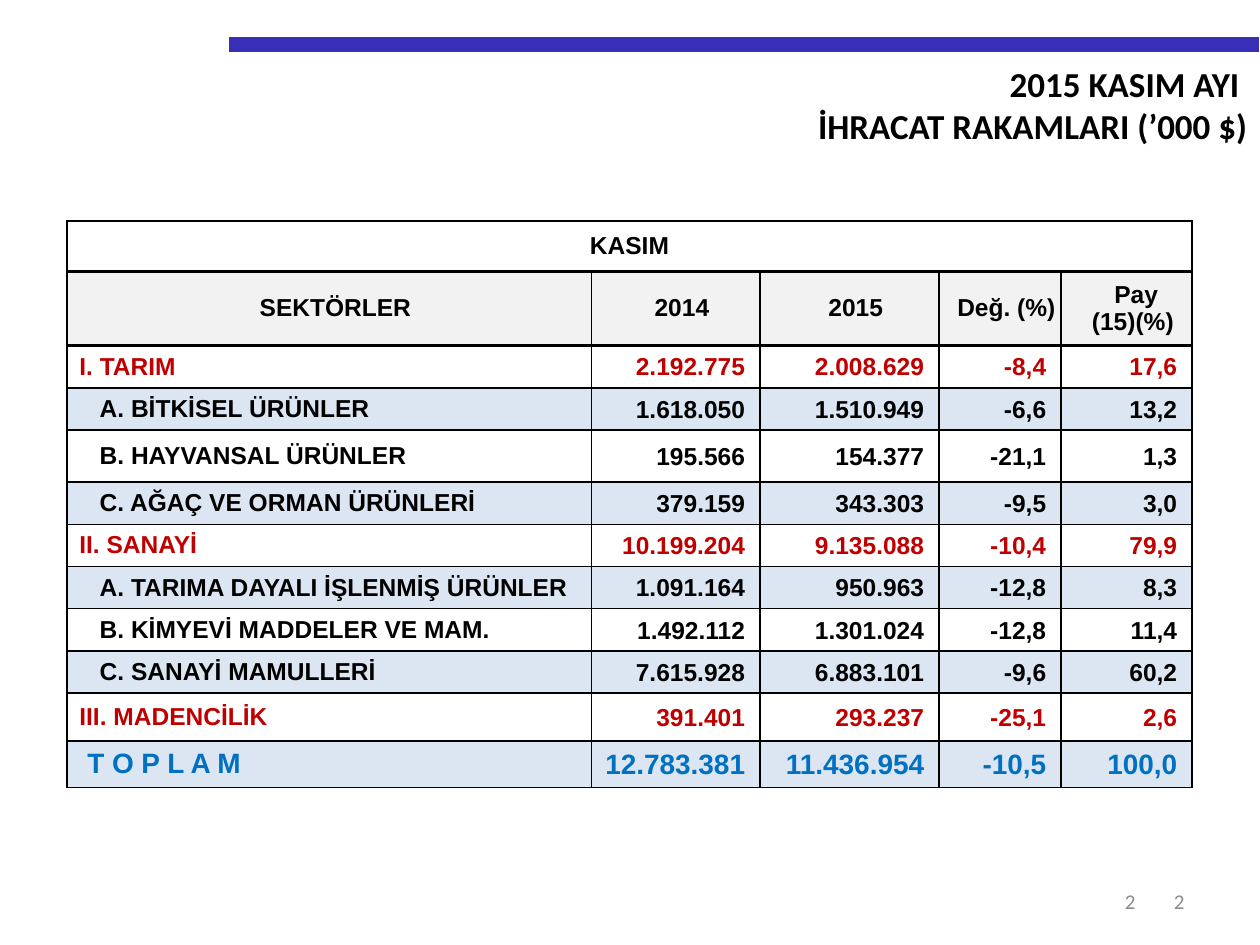
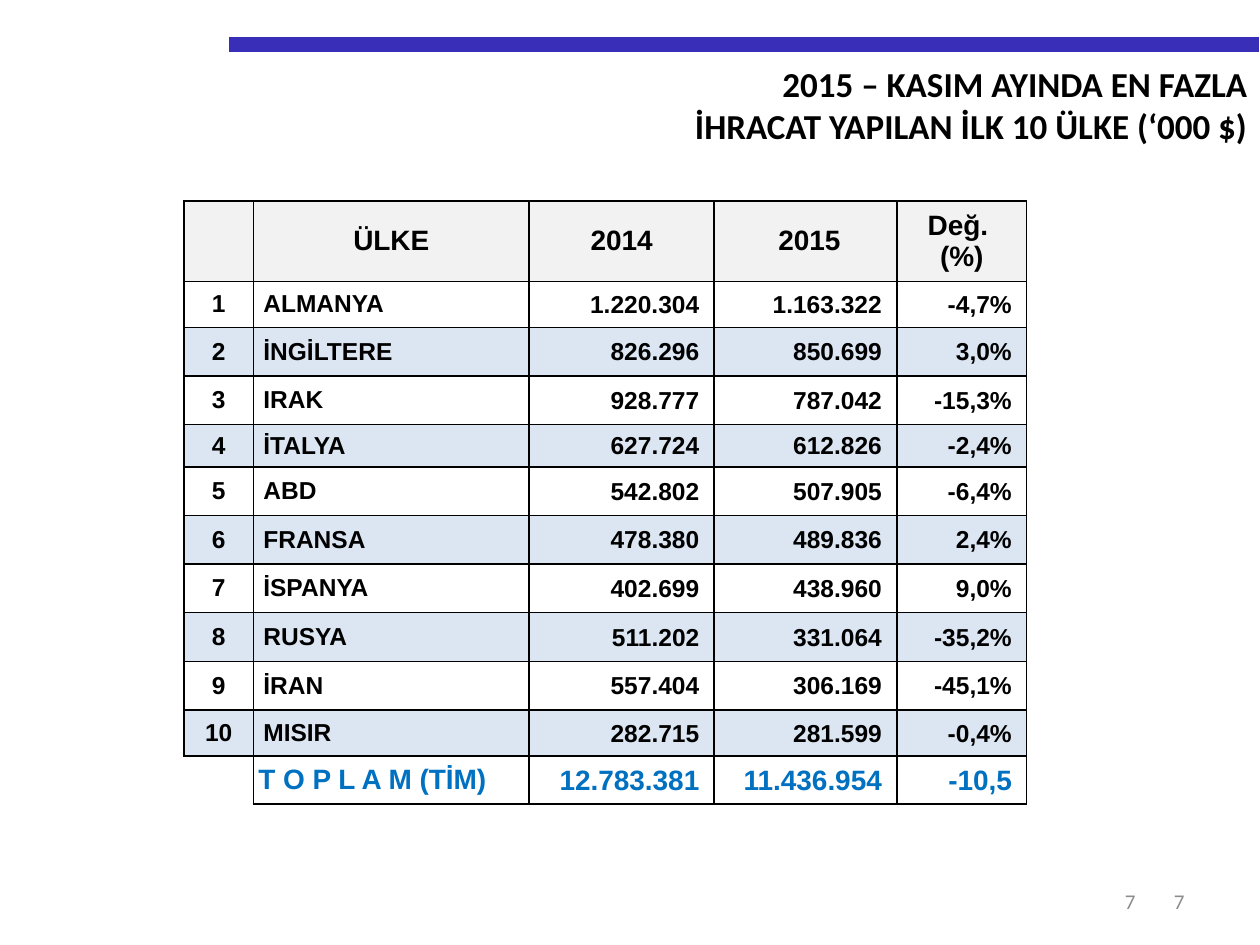
from pptx import Presentation
from pptx.dml.color import RGBColor
from pptx.enum.shapes import MSO_CONNECTOR
from pptx.enum.text import MSO_ANCHOR, PP_ALIGN
from pptx.oxml.ns import qn
from pptx.util import Cm, Pt
from lxml.etree import SubElement

BLACK, RED, BLUE = "000000", "C00000", "0070C0"
HEADER_FILL, BAND_FILL = "F2F2F2", "DCE6F2"
BAR, PAGE_GREY = "382EB8", "8C8C8C"


def colour(hex_code):
    return RGBColor.from_string(hex_code)


def write(frame, text, font, size, hex_code, align, bold=True):
    frame.text = text
    frame.word_wrap = True
    for paragraph in frame.paragraphs:
        paragraph.alignment = align
        for run in paragraph.runs:
            run.font.name = font
            run.font.size = Pt(size)
            run.font.bold = bold
            run.font.color.rgb = colour(hex_code)


november_rows = [
    (1.01, BLACK, 14, 0.25, ["KASIM", "", "", "", ""]),
    (1.49, BLACK, 14, 0.25, ["SEKTÖRLER", "2014", "2015", "Değ. (%)", " Pay\n(15)(%)"]),
    (0.86, RED, 14, 0.25, ["I. TARIM", "2.192.775", "2.008.629", "-8,4", "17,6"]),
    (0.85, BLACK, 14, 0.66, ["A. BİTKİSEL ÜRÜNLER", "1.618.050", "1.510.949", "-6,6", "13,2"]),
    (1.05, BLACK, 14, 0.66, ["B. HAYVANSAL ÜRÜNLER", "195.566", "154.377", "-21,1", "1,3"]),
    (0.85, BLACK, 14, 0.66, ["C. AĞAÇ VE ORMAN ÜRÜNLERİ", "379.159", "343.303", "-9,5", "3,0"]),
    (0.85, RED, 14, 0.25, ["II. SANAYİ", "10.199.204", "9.135.088", "-10,4", "79,9"]),
    (0.85, BLACK, 14, 0.66, ["A. TARIMA DAYALI İŞLENMİŞ ÜRÜNLER", "1.091.164", "950.963", "-12,8", "8,3"]),
    (0.85, BLACK, 14, 0.66, ["B. KİMYEVİ MADDELER VE MAM.", "1.492.112", "1.301.024", "-12,8", "11,4"]),
    (0.85, BLACK, 14, 0.66, ["C. SANAYİ MAMULLERİ", "7.615.928", "6.883.101", "-9,6", "60,2"]),
    (0.97, RED, 14, 0.25, ["III. MADENCİLİK", "391.401", "293.237", "-25,1", "2,6"]),
    (0.93, BLUE, 16, 0.41, ["T O P L A M", "12.783.381", "11.436.954", "-10,5", "100,0"]),
]

countries = [
    (0.93, "ALMANYA", "1.220.304", "1.163.322", "-4,7%"),
    (0.98, "İNGİLTERE", "826.296", "850.699", "3,0%"),
    (0.98, "IRAK", "928.777", "787.042", "-15,3%"),
    (0.85, "İTALYA", "627.724", "612.826", "-2,4%"),
    (0.98, "ABD", "542.802", "507.905", "-6,4%"),
    (0.98, "FRANSA", "478.380", "489.836", "2,4%"),
    (0.98, "İSPANYA", "402.699", "438.960", "9,0%"),
    (0.98, "RUSYA", "511.202", "331.064", "-35,2%"),
    (0.98, "İRAN", "557.404", "306.169", "-45,1%"),
    (0.93, "MISIR", "282.715", "281.599", "-0,4%"),
]
country_rows = [(1.62, BLACK, 16, 0.25, ["", "ÜLKE", "2014", " 2015", "Değ. \n(%)"])]
for rank, (height, *figures) in enumerate(countries, 1):
    country_rows.append((height, BLACK, 14, 0.2, [str(rank), *figures]))
country_rows.append(
    (0.97, BLUE, 16, 0.1, ["", "T O P L A M (TİM)", "12.783.381", "11.436.954", "-10,5"]))

reports = [
    ("2", "2015 KASIM AYI \nİHRACAT RAKAMLARI (’000 $)",
     1.35, 4.46, [10.57, 3.4, 3.61, 2.46, 2.64], november_rows, 1, 0),
    ("7", "2015 – KASIM AYINDA EN FAZLA\nİHRACAT YAPILAN İLK 10 ÜLKE (‘000 $)",
     3.71, 4.05, [1.4, 5.56, 3.73, 3.68, 2.62], country_rows, 0, 1),
]

prs = Presentation()
prs.slide_width, prs.slide_height = Cm(25.4), Cm(19.05)

for page, title, left, top, widths, rows, header, label_column in reports:
    slide = prs.slides.add_slide(prs.slide_layouts[6])

    bar = slide.shapes.add_connector(
        MSO_CONNECTOR.STRAIGHT, Cm(4.62), Cm(0.89), Cm(25.38), Cm(0.89))
    bar.line.color.rgb = colour(BAR)
    bar.line.width = Pt(8.5)
    SubElement(bar._element.spPr, qn("a:effectLst"))

    for number_left, number_width in ((18.21, 5.92), (17.81, 5.33)):
        number = slide.shapes.add_textbox(
            Cm(number_left), Cm(17.65), Cm(number_width), Cm(1.02)).text_frame
        write(number, page, "Calibri", 12, PAGE_GREY, PP_ALIGN.RIGHT, bold=False)
        number.vertical_anchor = MSO_ANCHOR.MIDDLE

    heading = slide.shapes.add_textbox(Cm(2.69), Cm(1.14), Cm(22.71), Cm(1.96))
    write(heading.text_frame, title, "Calibri", 20, BLACK, PP_ALIGN.RIGHT)

    exports = slide.shapes.add_table(
        len(rows), len(widths), Cm(left), Cm(top),
        Cm(sum(widths)), Cm(sum(row[0] for row in rows))).table
    exports.first_row = exports.horz_banding = False
    for column, width in zip(exports.columns, widths):
        column.width = Cm(width)
    if header:
        exports.cell(0, 0).merge(exports.cell(0, len(widths) - 1))

    for r, (height, text_colour, size, indent, values) in enumerate(rows):
        exports.rows[r].height = Cm(height)
        for c, value in enumerate(values):
            cell = exports.cell(r, c)
            corner = r == len(rows) - 1 and not value

            for side in ("L", "R", "T", "B"):
                edge = r + (side == "B")
                heavy = header and side in "TB" and edge in (1, 2)
                line = SubElement(cell._tc.get_or_add_tcPr(), qn(f"a:ln{side}"),
                                  w=str(Pt(2 if heavy else 1)))
                if corner and side in "LB":
                    SubElement(line, qn("a:noFill"))
                else:
                    SubElement(SubElement(line, qn("a:solidFill")), qn("a:srgbClr"), val=BLACK)

            if r == header or (r > header and (r - header) % 2 == 0 and not corner):
                cell.fill.solid()
                cell.fill.fore_color.rgb = colour(HEADER_FILL if r == header else BAND_FILL)
            else:
                cell.fill.background()

            cell.vertical_anchor = MSO_ANCHOR.MIDDLE
            if corner:
                cell.margin_top = cell.margin_bottom = 0
            if not value:
                continue
            if r <= header or c < label_column:
                align = PP_ALIGN.CENTER
                if r == header and header:
                    cell.margin_right = 0
            elif c == label_column:
                align = PP_ALIGN.LEFT
                cell.margin_left, cell.margin_right = Cm(indent), 0
            else:
                align = PP_ALIGN.RIGHT
                cell.margin_left, cell.margin_right = Cm(0.03), Cm(0.3)
                cell.margin_top, cell.margin_bottom = Cm(0.03), 0
            write(cell.text_frame, value, "Arial", size, text_colour, align)

prs.save("out.pptx")
